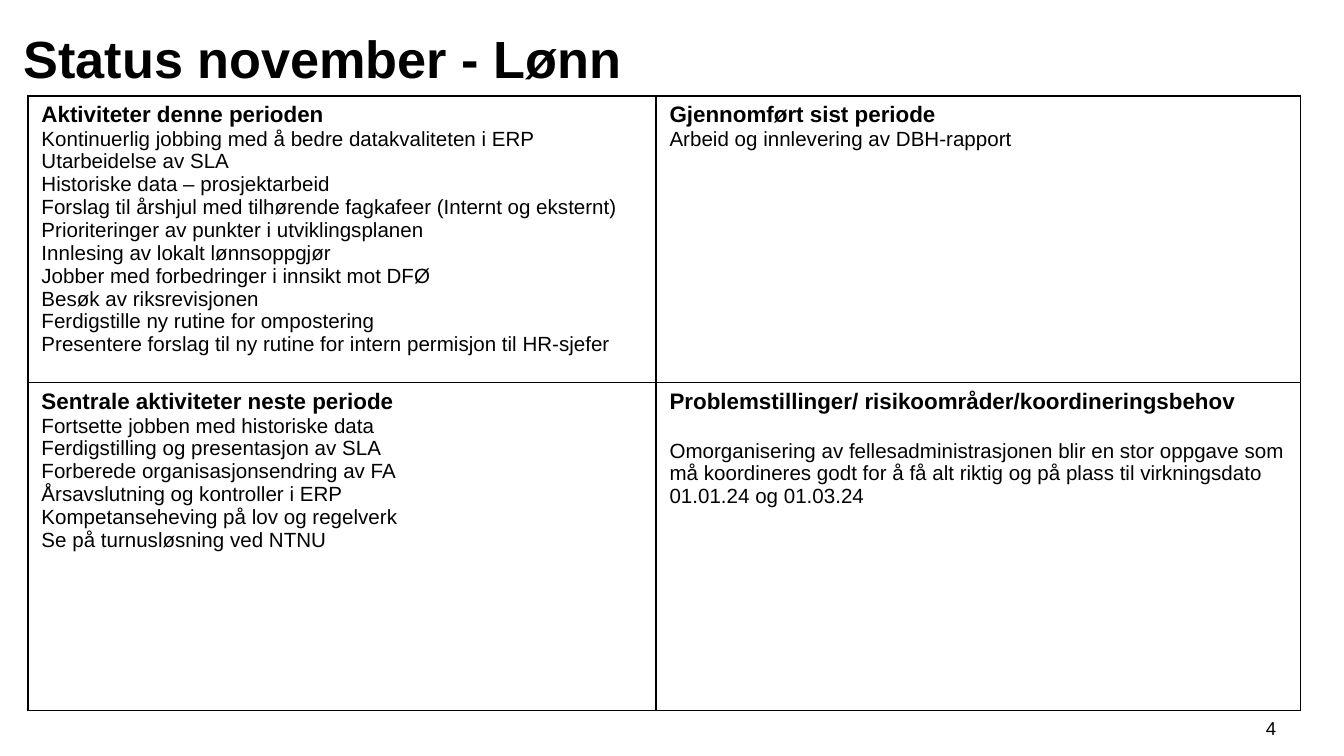
from lxml.etree import SubElement as Sub
from pptx import Presentation
from pptx.dml.color import RGBColor as RGB
from pptx.enum.text import MSO_ANCHOR as Anchor, PP_ALIGN as Align
from pptx.oxml.ns import qn
from pptx.util import Cm, Pt

COLORS = {"ink": "000000"}

CELLS = [
    [
        ("Aktiviteter denne perioden", [
            "Kontinuerlig jobbing med å bedre datakvaliteten i ERP",
            "Utarbeidelse av SLA",
            "Historiske data – prosjektarbeid",
            "Forslag til årshjul med tilhørende fagkafeer (Internt og eksternt)",
            "Prioriteringer av punkter i utviklingsplanen",
            "Innlesing av lokalt lønnsoppgjør",
            "Jobber med forbedringer i innsikt mot DFØ",
            "Besøk av riksrevisjonen",
            "Ferdigstille ny rutine for ompostering",
            "Presentere forslag til ny rutine for intern permisjon til HR-sjefer",
        ], 0),
        ("Gjennomført sist periode", ["Arbeid og innlevering av DBH-rapport"], 0),
    ],
    [
        ("Sentrale aktiviteter neste periode", [
            "Fortsette jobben med historiske data",
            "Ferdigstilling og presentasjon av SLA",
            "Forberede organisasjonsendring av FA",
            "Årsavslutning og kontroller i ERP",
            "Kompetanseheving på lov og regelverk",
            "Se på turnusløsning ved NTNU",
        ], 0),
        ("Problemstillinger/ risikoområder/koordineringsbehov", [
            "Omorganisering av fellesadministrasjonen blir en stor oppgave som "
            "må koordineres godt for å få alt riktig og på plass til "
            "virkningsdato 01.01.24 og 01.03.24",
        ], 13.4),
    ],
]


class Deck:
    font = "Arial"

    def __init__(self, slide):
        self.slide = slide

    def run(self, para, text, size, bold=False):
        run = para.add_run()
        run.text = text
        run.font.name = self.font
        run.font.size = Pt(size)
        run.font.bold = bold
        run.font.color.rgb = RGB.from_string(COLORS["ink"])

    def text(self, box, text, size, bold=False, align=Align.LEFT):
        frame = self.slide.shapes.add_textbox(*map(Cm, box)).text_frame
        frame.word_wrap = True
        frame.vertical_anchor = Anchor.MIDDLE
        frame.paragraphs[0].alignment = align
        self.run(frame.paragraphs[0], text, size, bold)

    def border(self, cell):
        props = cell._tc.get_or_add_tcPr()
        for index, side in enumerate(("lnL", "lnR", "lnT", "lnB")):
            line = Sub(props, qn(f"a:{side}"), w=str(Pt(1)))
            fill = Sub(line, qn("a:solidFill"))
            Sub(fill, qn("a:srgbClr"), val=COLORS["ink"])
            props.insert(index, line)

    def cell(self, cell, head, items, gap):
        cell.fill.background()
        self.border(cell)
        frame = cell.text_frame
        self.run(frame.paragraphs[0], head, 12, True)
        for index, item in enumerate(items):
            para = frame.add_paragraph()
            if gap and index == 0:
                para.space_before = Pt(gap)
            self.run(para, item, 11)

    def table(self, left, top, widths, heights, cells):
        box = left, top, sum(widths), sum(heights)
        table = self.slide.shapes.add_table(
            len(heights), len(widths), *map(Cm, box)).table
        table.first_row = table.horz_banding = False
        for col, width in zip(table.columns, widths):
            col.width = Cm(width)
        for row, height, data in zip(table.rows, heights, cells):
            row.height = Cm(height)
            for cell, content in zip(row.cells, data):
                self.cell(cell, *content)


def main():
    prs = Presentation()
    prs.slide_width, prs.slide_height = Cm(25.4), Cm(14.29)
    deck = Deck(prs.slides.add_slide(prs.slide_layouts[6]))
    deck.text((23.55, 13.39, 0.94, 0.76), "4", 10, align=Align.CENTER)
    deck.text((0.2, 0.36, 23.29, 1.45), "Status november - Lønn", 28, True)
    deck.table(0.53, 1.81, (11.87, 12.18), (5.03, 6.2), CELLS)
    prs.save("out.pptx")


if __name__ == "__main__":
    main()
